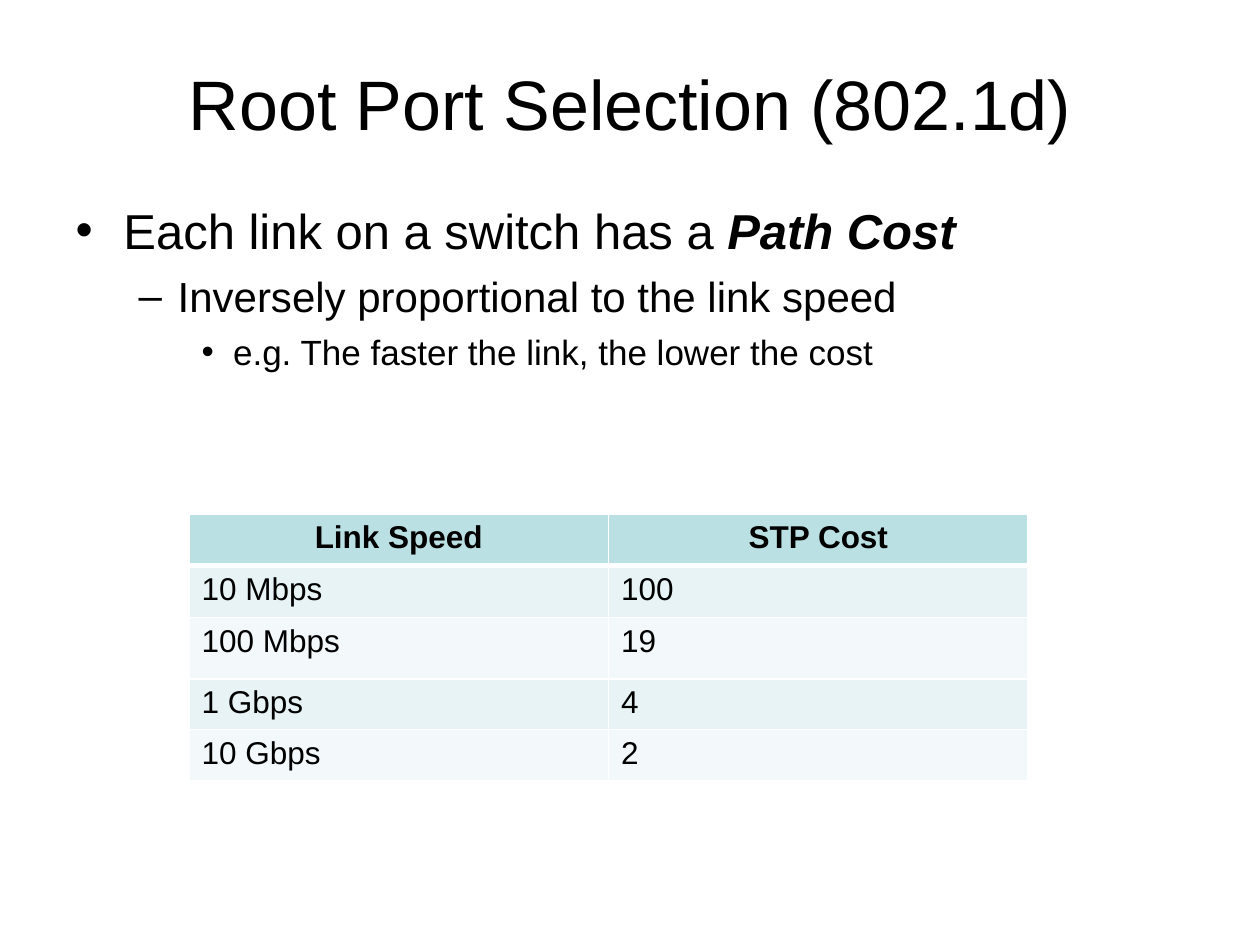
from lxml.etree import SubElement
from pptx import Presentation
from pptx.dml.color import RGBColor
from pptx.enum.text import MSO_ANCHOR, MSO_AUTO_SIZE, PP_ALIGN
from pptx.oxml.ns import qn
from pptx.util import Inches, Pt


def rgb(value):
    return RGBColor.from_string(value)


def add_text(paragraph, text, size=18, color="000000", bold=False, italic=False,
             align=PP_ALIGN.LEFT):
    paragraph.alignment = align
    run = paragraph.add_run()
    run.text = text
    run.font.name = "Arial"
    run.font.size = Pt(size)
    run.font.color.rgb = rgb(color)
    run.font.bold = bold
    run.font.italic = italic


prs = Presentation()
prs.slide_width, prs.slide_height = Inches(10), Inches(7.5)
slide = prs.slides.add_slide(prs.slide_layouts[1])

title = slide.shapes.title
title.left, title.top, title.width, title.height = map(Inches, (0.5, 0.3, 9, 1.03))
title.text_frame.auto_size = MSO_AUTO_SIZE.NONE
title.text_frame.vertical_anchor = MSO_ANCHOR.MIDDLE
add_text(title.text_frame.paragraphs[0], "Root Port Selection (802.1d)", size=40,
         align=PP_ALIGN.CENTER)

body = slide.placeholders[1]
body.left, body.top, body.width, body.height = map(Inches, (0.5, 1.5, 9, 4.92))
points = body.text_frame
points.auto_size = MSO_AUTO_SIZE.NONE
points.margin_top = Inches(0.09)

# plain text, emphasised text, size, bullet, left margin, hanging indent, space before
outline = [
    ("Each link on a switch has a ", "Path Cost", 28, "•", 0.38, 0.38, 0),
    ("Inversely proportional to the link speed", "", 24, "–", 0.81, 0.31, 6.5),
    ("e.g. The faster the link, the lower the cost", "", 20, "•", 1.25, 0.25, 5.5),
]
for level, (plain, emphasis, size, bullet, margin, hanging, before) in enumerate(outline):
    point = points.add_paragraph() if level else points.paragraphs[0]
    point.level = level
    point.space_before = Pt(before)
    properties = point._p.get_or_add_pPr()
    properties.set("marL", str(Inches(margin)))
    properties.set("indent", str(-Inches(hanging)))
    SubElement(properties, qn("a:buFont"), typeface="Arial")
    SubElement(properties, qn("a:buChar"), char=bullet)
    add_text(point, plain, size=size)
    if emphasis:
        add_text(point, emphasis, size=size, bold=True, italic=True)

costs = [
    ("Link Speed", "STP Cost"),
    ("10 Mbps", "100"),
    ("100 Mbps", "19"),
    ("1 Gbps", "4"),
    ("10 Gbps", "2"),
]
row_heights = [0.41, 0.41, 0.49, 0.4, 0.41]
row_fills = ["BBE0E3", "E7F3F4", "F3F9FA", "E7F3F4", "F3F9FA"]
cost_table = slide.shapes.add_table(len(costs), 2, Inches(1.5), Inches(4.08),
                                    Inches(6.67), Inches(sum(row_heights))).table
for column in cost_table.columns:
    column.width = Inches(3.33)

for r, values in enumerate(costs):
    cost_table.rows[r].height = Inches(row_heights[r])
    header = r == 0
    for c, value in enumerate(values):
        cell = cost_table.cell(r, c)
        cell_properties = cell._tc.get_or_add_tcPr()
        widths = {"L": 1, "R": 1, "T": 3 if r == 1 else 1, "B": 3 if header else 1}
        for side, width in widths.items():
            border = SubElement(cell_properties, qn(f"a:ln{side}"), w=str(Pt(width)))
            SubElement(SubElement(border, qn("a:solidFill")), qn("a:srgbClr"), val="FFFFFF")
        cell.fill.solid()
        cell.fill.fore_color.rgb = rgb(row_fills[r])
        add_text(cell.text_frame.paragraphs[0], value, bold=header,
                 align=PP_ALIGN.CENTER if header else PP_ALIGN.LEFT)

prs.save("out.pptx")
